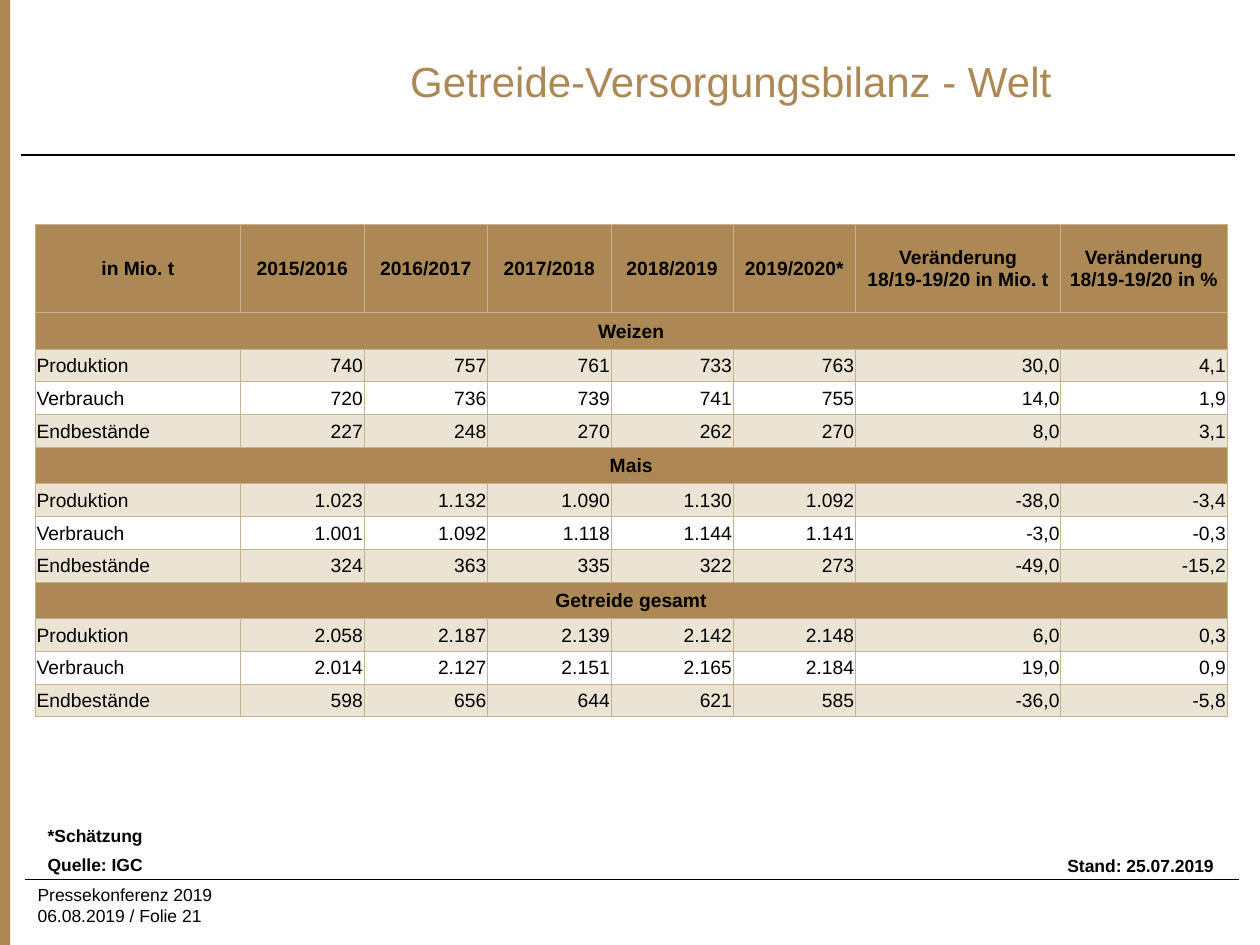
from copy import deepcopy

from lxml import etree
from pptx import Presentation, util as u
from pptx.dml.color import RGBColor
from pptx.enum import shapes, text
from pptx.oxml import ns

COLORS = {"brown": "AC8854", "beige": "EBE4D5", "border": "C8B18E", "black": "000000"}
ALIGN = text.PP_ALIGN
LEFT, WIDTH = 0.28, 9.45

COLUMN_WIDTHS = [1.63, 0.98, 0.98, 0.98, 0.97, 0.97, 1.63, 1.32]
HEADER_HEIGHT, SECTION_HEIGHT, DATA_HEIGHT = 0.7, 0.29, 0.26
HEADERS = ["in Mio. t", "2015/2016", "2016/2017", "2017/2018", "2018/2019", "2019/2020*",
           "Veränderung\v18/19-19/20 in Mio. t", "Veränderung\v18/19-19/20 in %"]
ROW_LABELS = ["Produktion", "Verbrauch", "Endbestände"]
BALANCES = {
    "Weizen": [
        ["740", "757", "761", "733", "763", "30,0", "4,1"],
        ["720", "736", "739", "741", "755", "14,0", "1,9"],
        ["227", "248", "270", "262", "270", "8,0", "3,1"],
    ],
    "Mais": [
        ["1.023", "1.132", "1.090", "1.130", "1.092", "-38,0", "-3,4"],
        ["1.001", "1.092", "1.118", "1.144", "1.141", "-3,0", "-0,3"],
        ["324", "363", "335", "322", "273", "-49,0", "-15,2"],
    ],
    "Getreide gesamt": [
        ["2.058", "2.187", "2.139", "2.142", "2.148", "6,0", "0,3"],
        ["2.014", "2.127", "2.151", "2.165", "2.184", "19,0", "0,9"],
        ["598", "656", "644", "621", "585", "-36,0", "-5,8"],
    ],
}


def rgb(name):
    return RGBColor.from_string(COLORS[name])


def write_text(frame, content, size=10, color="black", bold=False, align=ALIGN.LEFT,
               font="Arial"):
    """Fill the first paragraph; a vertical tab in content is a line break."""
    paragraph = frame.paragraphs[0]
    paragraph.text = content
    paragraph.alignment = align
    for run in paragraph.runs:
        run.font.name = font
        run.font.size = u.Pt(size)
        run.font.bold = bold
        run.font.color.rgb = rgb(color)
    for line_break in paragraph._p.findall(ns.qn("a:br")):
        line_break.append(deepcopy(paragraph.runs[0]._r.rPr))


def set_borders(cell, color="border", width=0.5):
    properties = cell._tc.get_or_add_tcPr()
    for side in ("lnL", "lnR", "lnT", "lnB"):
        line = etree.SubElement(properties, ns.qn(f"a:{side}"), w=str(u.Pt(width)))
        fill = etree.SubElement(line, ns.qn("a:solidFill"))
        etree.SubElement(fill, ns.qn("a:srgbClr"), val=COLORS[color])


class BalanceSlide:
    """Holds the current slide and draws its elements in the house style."""

    def __init__(self, presentation):
        self.slide = presentation.slides.add_slide(presentation.slide_layouts[5])
        self.shapes = self.slide.shapes

    def title(self, content, left, top, width, height):
        title = self.shapes.title
        title.left, title.top = u.Inches(left), u.Inches(top)
        title.width, title.height = u.Inches(width), u.Inches(height)
        title.text_frame.vertical_anchor = text.MSO_ANCHOR.MIDDLE
        write_text(title.text_frame, content, size=24, color="brown", align=ALIGN.CENTER)

    def bar(self, left, top, width, height):
        shape = self.shapes.add_shape(shapes.MSO_SHAPE.RECTANGLE, u.Inches(left),
                                      u.Inches(top), u.Inches(width), u.Inches(height))
        shape.shadow.inherit = False
        shape.fill.solid()
        shape.fill.fore_color.rgb = rgb("brown")
        shape.line.fill.background()

    def rule(self, left, right, y):
        line = self.shapes.add_connector(shapes.MSO_CONNECTOR.STRAIGHT, u.Inches(left),
                                         u.Inches(y), u.Inches(right), u.Inches(y))
        line.line.color.rgb = rgb("black")
        line.line.width = u.Pt(0.75)
        etree.SubElement(line._element.spPr, ns.qn("a:effectLst"))

    def label(self, content, left, top, width, height, inset=0.05, **style):
        box = self.shapes.add_textbox(u.Inches(left), u.Inches(top),
                                      u.Inches(width), u.Inches(height))
        frame = box.text_frame
        frame.word_wrap = True
        frame.margin_top = frame.margin_bottom = u.Inches(inset)
        write_text(frame, content, **style)

    def cell(self, cell, content, fill=None, **style):
        cell.margin_left = cell.margin_right = cell.margin_top = u.Inches(0.01)
        cell.margin_bottom = 0
        cell.vertical_anchor = text.MSO_ANCHOR.MIDDLE
        set_borders(cell)
        if fill:
            cell.fill.solid()
            cell.fill.fore_color.rgb = rgb(fill)
        else:
            cell.fill.background()
        write_text(cell.text_frame, content, size=11, **style)

    def balance_table(self, left, top):
        section_heights = [SECTION_HEIGHT] + [DATA_HEIGHT] * len(ROW_LABELS)
        heights = [HEADER_HEIGHT] + section_heights * len(BALANCES)
        table = self.shapes.add_table(
            len(heights), len(COLUMN_WIDTHS), u.Inches(left), u.Inches(top),
            u.Inches(WIDTH), u.Inches(sum(heights))).table
        for column, width in zip(table.columns, COLUMN_WIDTHS):
            column.width = u.Inches(width)
        for row, height in zip(table.rows, heights):
            row.height = u.Inches(height)

        heading = {"fill": "brown", "bold": True, "align": ALIGN.CENTER}
        rows = iter(table.rows)
        for cell, content in zip(next(rows).cells, HEADERS):
            self.cell(cell, content, **heading)
        for section, balance in BALANCES.items():
            cells = list(next(rows).cells)
            cells[0].merge(cells[-1])
            for index, cell in enumerate(cells):
                self.cell(cell, "" if index else section, **heading)
            for number, (name, values) in enumerate(zip(ROW_LABELS, balance)):
                fill = None if number % 2 else "beige"
                cells = list(next(rows).cells)
                self.cell(cells[0], name, fill, align=ALIGN.JUSTIFY)
                for cell, value in zip(cells[1:], values):
                    self.cell(cell, value, fill, align=ALIGN.RIGHT)


def main():
    presentation = Presentation()
    presentation.slide_width, presentation.slide_height = u.Inches(10), u.Inches(7.5)
    page = BalanceSlide(presentation)
    page.bar(-0.01, 0, 0.09, 7.5)
    page.rule(0.17, 9.8, 1.23)
    page.label("Pressekonferenz 2019\v06.08.2019 / Folie 21", 0.2, 6.97, 3.31, 0.4)
    page.rule(0.2, 9.83, 6.98)
    page.title("Getreide-Versorgungsbilanz - Welt", 1.85, 0.13, 7.9, 1.02)
    page.label("*Schätzung", LEFT, 6.51, WIDTH, 0.24, inset=0.04, bold=True)
    page.label("Quelle: IGC", LEFT, 6.74, WIDTH, 0.24, inset=0.04, bold=True)
    page.label("Stand: 25.07.2019", LEFT, 6.74, WIDTH, 0.27, bold=True, align=ALIGN.RIGHT)
    page.balance_table(LEFT, 1.78)
    presentation.save("out.pptx")


if __name__ == "__main__":
    main()
